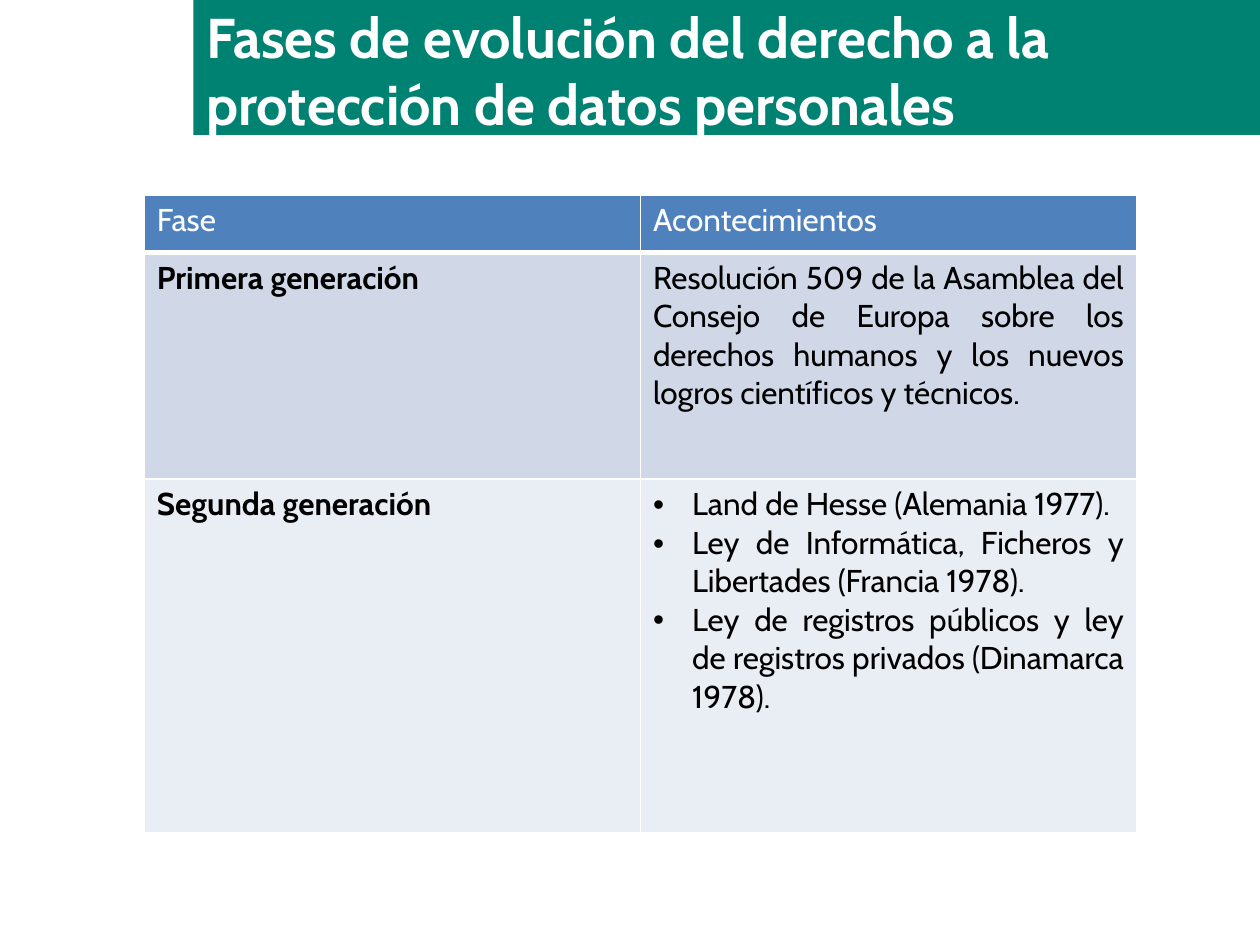
from dataclasses import dataclass

from lxml.etree import SubElement
from pptx import Presentation
from pptx.dml.color import RGBColor
from pptx.enum.shapes import MSO_SHAPE
from pptx.enum.text import MSO_ANCHOR, PP_ALIGN
from pptx.oxml.ns import qn
from pptx.util import Cm, Pt


@dataclass(frozen=True)
class Theme:
    font: str = "Cabin"
    band: str = "008272"
    head: str = "4F81BD"
    rows: tuple = ("D0D8E8", "E9EDF4")
    light: str = "FFFFFF"
    dark: str = "000000"
    title: int = 32
    body: int = 18


THEME = Theme()
HEADS = ("Fase", "Acontecimientos")
PHASES = (
    ("Primera generación", (
        "Resolución 509 de la Asamblea del Consejo de Europa sobre los "
        "derechos humanos y los nuevos logros científicos y técnicos.",
    )),
    ("Segunda generación", (
        "Land de Hesse (Alemania 1977).",
        "Ley de Informática, Ficheros y Libertades (Francia 1978).",
        "Ley de registros públicos y ley de registros privados "
        "(Dinamarca 1978).",
    )),
)


def add_run(para, text, size, color, bold=False):
    run = para.add_run()
    run.text = text
    font = run.font
    font.name, font.size, font.bold = THEME.font, Pt(size), bold
    font.color.rgb = RGBColor.from_string(color)


def add_bullet(para):
    props = para._p.get_or_add_pPr()
    props.set("marL", str(Cm(0.79)))
    props.set("indent", str(-Cm(0.79)))
    SubElement(props, qn("a:buFont"), typeface="Arial")
    SubElement(props, qn("a:buChar"), char="•")


def style_cell(cell, fill, base=1):
    # Borders come before the fill in the cell properties
    props = cell._tc.get_or_add_tcPr()
    for side, width in (("L", 1), ("R", 1), ("T", 1), ("B", base)):
        line = SubElement(props, qn(f"a:ln{side}"), w=str(Pt(width)))
        paint = SubElement(line, qn("a:solidFill"))
        SubElement(paint, qn("a:srgbClr"), val=THEME.light)
    cell.fill.solid()
    cell.fill.fore_color.rgb = RGBColor.from_string(fill)


def add_header(slide, left, top, width, height):
    # Green band, placed behind the title
    title = slide.shapes.title
    band = slide.shapes.add_shape(MSO_SHAPE.RECTANGLE, left, top, width, height)
    band.shadow.inherit = False
    band.fill.solid()
    band.fill.fore_color.rgb = RGBColor.from_string(THEME.band)
    band.line.fill.background()
    title._element.addprevious(band._element)

    # Title text
    title.left, title.top = left, top - Cm(0.08)
    title.width, title.height = width, height + Cm(0.28)
    frame = title.text_frame
    frame.word_wrap = True
    frame.vertical_anchor = MSO_ANCHOR.TOP
    para = frame.paragraphs[0]
    para.alignment = PP_ALIGN.LEFT
    para.line_spacing = 1.0
    para.space_before = Pt(0)
    add_run(para, "Fases de evolución del derecho a la protección de datos "
            "personales", THEME.title, THEME.light, True)


def add_phases(slide, left, top, width, heights):
    grid = slide.shapes.add_table(
        len(heights), len(HEADS), left, top, width, sum(heights)).table
    for row, height in zip(grid.rows, heights):
        row.height = height

    # Heading row
    for col, text in enumerate(HEADS):
        cell = grid.cell(0, col)
        style_cell(cell, THEME.head, base=3)
        add_run(cell.text_frame.paragraphs[0], text, THEME.body, THEME.light)

    # One row for each phase
    for row, ((name, events), fill) in enumerate(zip(PHASES, THEME.rows), 1):
        label, cell = grid.cell(row, 0), grid.cell(row, 1)
        style_cell(label, fill)
        style_cell(cell, fill)
        add_run(label.text_frame.paragraphs[0], name,
                THEME.body, THEME.dark, True)
        frame = cell.text_frame
        for num, event in enumerate(events):
            para = frame.add_paragraph() if num else frame.paragraphs[0]
            para.alignment = PP_ALIGN.JUSTIFY
            if len(events) > 1:
                add_bullet(para)
            add_run(para, event, THEME.body, THEME.dark)


def main():
    deck = Presentation()
    deck.slide_width, deck.slide_height = Cm(25.4), Cm(19.05)
    slide = deck.slides.add_slide(deck.slide_layouts[5])
    left = Cm(3.9)
    add_header(slide, left, Cm(0), deck.slide_width - left, Cm(2.72))
    add_phases(slide, Cm(2.91), Cm(3.93), Cm(20),
               (Cm(1.16), Cm(4.57), Cm(7.13)))
    deck.save("out.pptx")


if __name__ == "__main__":
    main()
